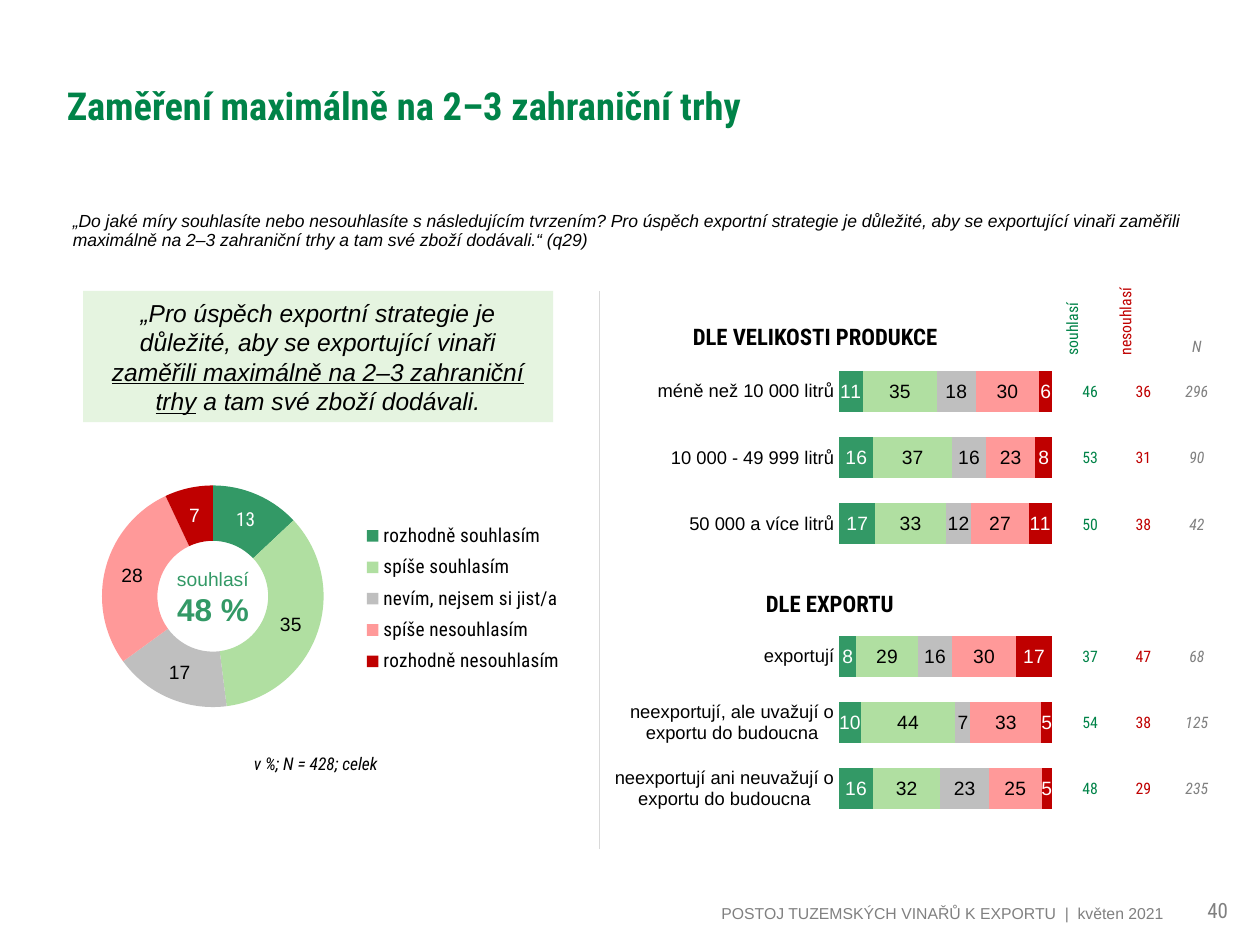
from lxml import etree
from pptx import Presentation
from pptx.chart.data import CategoryChartData
from pptx.dml.color import RGBColor
from pptx.enum.chart import XL_CHART_TYPE as ChartType, XL_LEGEND_POSITION as LegendPosition
from pptx.enum.chart import XL_TICK_MARK as TickMark
from pptx.enum.shapes import MSO_CONNECTOR as Connector, MSO_SHAPE as Shape
from pptx.enum.text import MSO_ANCHOR as Anchor, PP_ALIGN as Align
from pptx.oxml.ns import qn
from pptx.util import Inches, Pt

BLACK = RGBColor(0x00, 0x00, 0x00)
WHITE = RGBColor(0xFF, 0xFF, 0xFF)
GREEN = RGBColor(0x00, 0x83, 0x48)
RED = RGBColor(0xC0, 0x00, 0x00)
GREY = RGBColor(0x80, 0x80, 0x80)
RULE = RGBColor(0xD9, 0xD9, 0xD9)
PALE_GREEN = RGBColor(0xE5, 0xF4, 0xE0)
AGREE = RGBColor(0x33, 0x99, 0x66)
ANSWER_COLORS = [AGREE, RGBColor(0xB0, 0xDF, 0xA1), RGBColor(0xBF, 0xBF, 0xBF),
                 RGBColor(0xFF, 0x99, 0x99), RGBColor(0xBF, 0x00, 0x00)]
LABEL_COLORS = [WHITE, BLACK, BLACK, BLACK, WHITE]
COLUMN_COLORS = [GREEN, RED, GREY]
SANS = "Arial"
CONDENSED = "Roboto Condensed"

ANSWERS = ["rozhodně souhlasím", "spíše souhlasím", "nevím, nejsem si jist/a",
           "spíše nesouhlasím", "rozhodně nesouhlasím"]
TOTALS = [13, 35, 17, 28, 7]
# Group, shares of the five answers, then agree / disagree / N
GROUPS = [
    ("méně než 10 000 litrů", [11, 35, 18, 30, 6], [46, 36, 296]),
    ("10 000 - 49 999 litrů", [16, 37, 16, 23, 8], [53, 31, 90]),
    ("50 000 a více litrů", [17, 33, 12, 27, 11], [50, 38, 42]),
    ("", [None] * 5, ["", "", ""]),
    ("exportují", [8, 29, 16, 30, 17], [37, 47, 68]),
    ("neexportují, ale uvažují o exportu do budoucna", [10, 44, 7, 33, 5], [54, 38, 125]),
    ("neexportují ani neuvažují o exportu do budoucna", [16, 32, 23, 25, 5], [48, 29, 235]),
]


def format_paragraph(paragraph, text, size, color, name=SANS, bold=False, italic=False, align=None):
    """Write the text, if any, and set one font for the whole paragraph."""
    if text:
        paragraph.add_run().text = text
    paragraph.alignment = align
    font = paragraph.font
    font.size, font.name, font.bold, font.italic = Pt(size), name, bold, italic
    font.color.rgb = color


def set_layout(element, left, top, width, height, inner=False):
    """Place a plot area or legend by fractions of its chart."""
    old = element.find(qn("c:layout"))
    if old is not None:
        element.remove(old)
    layout = etree.Element(qn("c:layout"))
    manual = etree.SubElement(layout, qn("c:manualLayout"))
    values = [("layoutTarget", "inner")] if inner else []
    values += [("xMode", "edge"), ("yMode", "edge"),
               ("x", left), ("y", top), ("w", width), ("h", height)]
    for tag, value in values:
        etree.SubElement(manual, qn("c:" + tag)).set("val", str(value))
    element.insert(0 if inner else 1, layout)


presentation = Presentation()
presentation.slide_width, presentation.slide_height = Inches(10), Inches(7.5)
slide = presentation.slides.add_slide(presentation.slide_layouts[5])
shapes = slide.shapes

title = shapes.title
title.left, title.top, title.width, title.height = map(Inches, (0.43, 0.21, 7.17, 1.25))
title.text_frame.vertical_anchor = Anchor.MIDDLE
format_paragraph(title.text_frame.paragraphs[0], "Zaměření maximálně na 2–3 zahraniční trhy",
                 22, GREEN, CONDENSED, bold=True, align=Align.LEFT)

# Doughnut of all respondents
totals_data = CategoryChartData(number_format="0")
totals_data.categories = ANSWERS
totals_data.add_series("Celek", TOTALS)
doughnut = shapes.add_chart(ChartType.DOUGHNUT, Inches(-0.22), Inches(3.4),
                            Inches(7.15), Inches(4.66), totals_data).chart
doughnut.has_title = False
doughnut.font.size, doughnut.font.name = Pt(11), SANS
set_layout(doughnut.plots[0]._element.getparent(), 0.144, 0.097, 0.246, 0.378, inner=True)
doughnut.has_legend = True
legend = doughnut.legend
legend.position = LegendPosition.RIGHT
legend.include_in_layout = False
legend.font.size, legend.font.name = Pt(11), CONDENSED
legend.font.color.rgb = BLACK
set_layout(legend._element, 0.42, 0.15, 0.25, 0.28)
doughnut.plots[0].has_data_labels = True
doughnut.plots[0].data_labels.show_value = True
doughnut.plots[0].data_labels.show_percentage = False
for index, (fill_color, label_color) in enumerate(zip(ANSWER_COLORS, LABEL_COLORS)):
    point = doughnut.plots[0].series[0].points[index]
    point.format.fill.solid()
    point.format.fill.fore_color.rgb = fill_color
    point.format.line.fill.background()
    font = point.data_label.font
    font.size, font.name = Pt(11), CONDENSED if index == 0 else SANS
    font.color.rgb = label_color

# Stacked bars by group
groups_data = CategoryChartData(number_format="0")
groups_data.categories = [group for group, _, _ in GROUPS]
for index, answer in enumerate(ANSWERS):
    groups_data.add_series(answer, [shares[index] for _, shares, _ in GROUPS])
bars = shapes.add_chart(ChartType.BAR_STACKED_100, Inches(4.81), Inches(2.49),
                        Inches(3.94), Inches(4.25), groups_data).chart
bars.has_title = bars.has_legend = False
bars.font.size, bars.font.name = Pt(11), SANS
plot = bars.plots[0]
plot.gap_width, plot.overlap = 60, 100
set_layout(plot._element.getparent(), 0.47, 0.083, 0.429, 0.866, inner=True)
bars.value_axis.visible = False
bars.value_axis.has_major_gridlines = False
category_axis = bars.category_axis
category_axis.reverse_order = True
category_axis.major_tick_mark = TickMark.NONE
category_axis.format.line.fill.background()
category_axis.tick_labels.font.size = Pt(10.5)
category_axis.tick_labels.font.color.rgb = BLACK
for series, fill_color, label_color in zip(plot.series, ANSWER_COLORS, LABEL_COLORS):
    series.format.fill.solid()
    series.format.fill.fore_color.rgb = fill_color
    labels = series.data_labels
    labels.show_value = True
    labels.font.size, labels.font.name = Pt(11), SANS
    labels.font.color.rgb = label_color

# Quoted statement
statement = shapes.add_shape(Shape.RECTANGLE, Inches(0.66), Inches(2.31), Inches(3.73), Inches(1.04))
statement.shadow.inherit = False
statement.fill.solid()
statement.fill.fore_color.rgb = PALE_GREEN
statement.line.fill.background()
paragraph = statement.text_frame.paragraphs[0]
format_paragraph(paragraph, "„Pro úspěch exportní strategie je důležité, aby se exportující vinaři ",
                 14, BLACK, italic=True, align=Align.CENTER)
underlined = paragraph.add_run()
underlined.text = "zaměřili maximálně na 2–3 zahraniční trhy"
underlined.font.underline = True
paragraph.add_run().text = " a tam své zboží dodávali."

# Text boxes: place, wrapping, anchor, text and its format
QUESTION = ("„Do jaké míry souhlasíte nebo nesouhlasíte s následujícím tvrzením? Pro úspěch exportní "
            "strategie je důležité, aby se exportující vinaři zaměřili maximálně na 2–3 zahraniční trhy "
            "a tam své zboží dodávali.“ (q29)")
HEADING = dict(size=13, color=BLACK, name=CONDENSED, bold=True)
TEXT_BOXES = [
    ((0.48, 1.64, 9.33, 0.4), True, Anchor.TOP, QUESTION, dict(size=10, color=BLACK, italic=True)),
    ((1.68, 5.93, 1.65, 0.27), True, Anchor.TOP, "v %; N = 428; celek",
     dict(size=10, color=BLACK, name=CONDENSED, italic=True, align=Align.CENTER)),
    ((5.4, 2.51, 2.67, 0.32), False, Anchor.TOP, "DLE VELIKOSTI PRODUKCE", HEADING),
    ((5.98, 4.63, 1.5, 0.32), False, Anchor.TOP, "DLE EXPORTU", HEADING),
    ((0.49, 6.98, 8.84, 0.39), True, Anchor.BOTTOM, "POSTOJ TUZEMSKÝCH VINAŘŮ K EXPORTU  |  květen 2021",
     dict(size=9, color=GREY, align=Align.RIGHT)),
    ((9.33, 6.98, 0.67, 0.39), True, Anchor.BOTTOM, "40",
     dict(size=12, color=GREY, name=CONDENSED, align=Align.CENTER)),
    ((1.25, 4.45, 0.88, 0.59), True, Anchor.TOP, "souhlasí",
     dict(size=11, color=AGREE, align=Align.CENTER)),
]
for place, wrap, anchor, text, text_format in TEXT_BOXES:
    frame = shapes.add_textbox(*map(Inches, place)).text_frame
    frame.word_wrap, frame.vertical_anchor = wrap, anchor
    paragraph = frame.paragraphs[0]
    format_paragraph(paragraph, text, **text_format)
    if text == QUESTION:
        paragraph.line_spacing = 0.9
    elif text == "souhlasí":
        paragraph.add_line_break()
        share = paragraph.add_run()
        share.text = "48 %"
        share.font.size, share.font.bold = Pt(18), True

# Header and summary tables share their columns
HEADER = [["souhlasí", "nesouhlasí", "N"]]
SUMMARY = [summary for _, _, summary in GROUPS]
for top, height, rows in ((2.85, 3.68, SUMMARY), (2.04, 0.79, HEADER)):
    table = shapes.add_table(len(rows), 3, Inches(8.44), Inches(top), Inches(1.27), Inches(height)).table
    table.first_row = table.horz_banding = False
    for row_index, row in enumerate(rows):
        for column, value in enumerate(row):
            cell = table.cell(row_index, column)
            cell.fill.background()
            cell.margin_left = cell.margin_right = Inches(0.01)
            cell.margin_top = cell.margin_bottom = 0
            vertical = rows is HEADER and column < 2
            cell.vertical_anchor = Anchor.BOTTOM if value == "N" else Anchor.MIDDLE
            if vertical:
                cell._tc.get_or_add_tcPr().set("vert", "vert270")
            format_paragraph(cell.text_frame.paragraphs[0], str(value), 9, COLUMN_COLORS[column], CONDENSED,
                             italic=column == 2, align=Align.LEFT if vertical else Align.CENTER)

divider = shapes.add_connector(Connector.STRAIGHT, Inches(4.76), Inches(6.74), Inches(4.76), Inches(2.31))
divider.line.color.rgb = RULE
divider.line.width = Pt(0.5)
etree.SubElement(divider._element.spPr, qn("a:effectLst"))

presentation.save("out.pptx")
